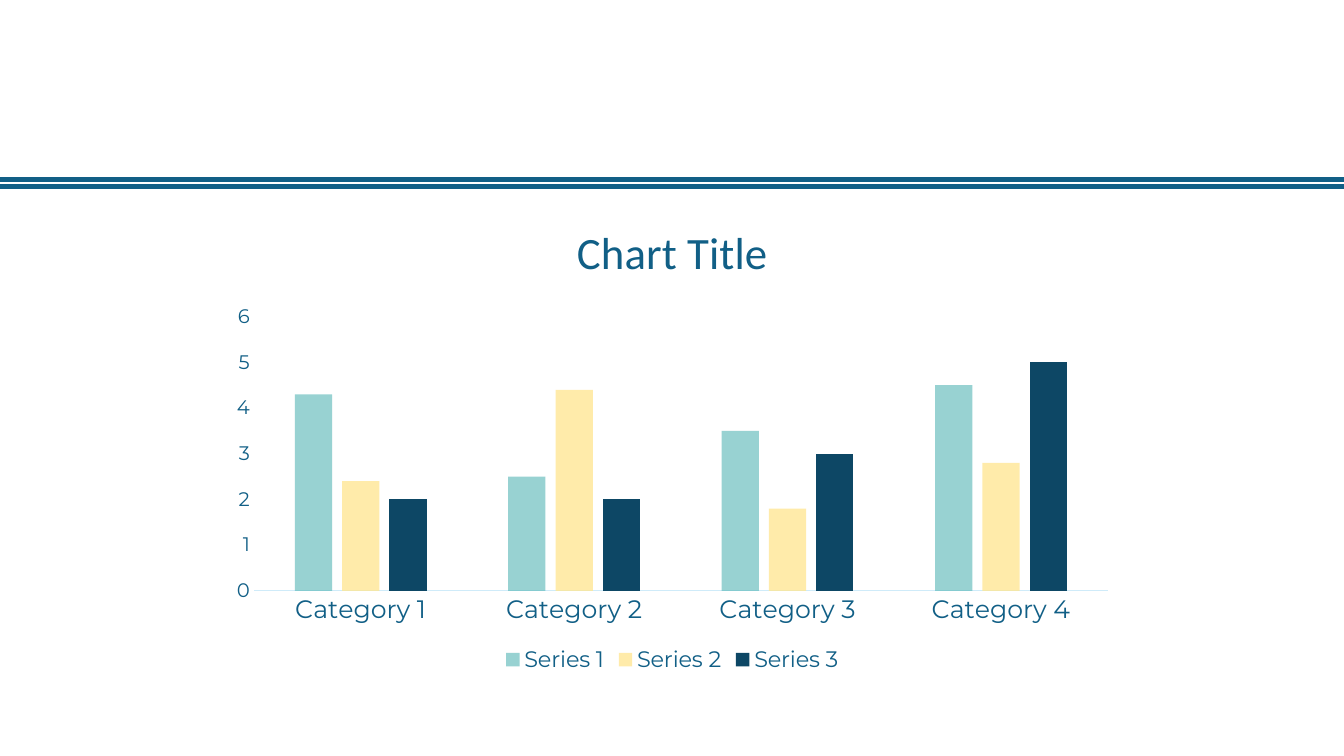
"""Build a slide with a double rule and a clustered column chart."""
from dataclasses import dataclass

from lxml import etree
from pptx import Presentation
from pptx.chart.data import CategoryChartData
from pptx.dml.color import RGBColor
from pptx.enum.chart import XL_CHART_TYPE, XL_LEGEND_POSITION, XL_TICK_MARK
from pptx.oxml.ns import qn
from pptx.util import Pt

COLUMNS = XL_CHART_TYPE.COLUMN_CLUSTERED
BOTTOM = XL_LEGEND_POSITION.BOTTOM
NO_TICK = XL_TICK_MARK.NONE

COLORS = {
    "blue": "115F86",
    "axis": "CFEBF9",
    "teal": "57B7B7",
    "yellow": "FFE690",
    "navy": "0D4765",
}
HEAD_FONT = "Calibri"
BODY_FONT = "Montserrat"
WIDTH, HEIGHT = 960, 540


@dataclass
class Series:
    name: str
    values: tuple[float, ...]
    color: str
    opacity: int = 100


CATEGORIES = [f"Category {n}" for n in range(1, 5)]
SERIES = [
    Series("Series 1", (4.3, 2.5, 3.5, 4.5), "teal", 61),
    Series("Series 2", (2.4, 4.4, 1.8, 2.8), "yellow", 76),
    Series("Series 3", (2, 2, 3, 5), "navy"),
]
RULES = [133.2, 128.2]


def rgb(name: str) -> RGBColor:
    return RGBColor.from_string(COLORS[name])


def set_font(font, size: float, name: str) -> None:
    font.size = Pt(size)
    font.name = name
    font.bold = False
    font.color.rgb = rgb("blue")


def add_rule(s, y: float) -> None:
    line = s.shapes.add_connector(1, Pt(0), Pt(y), Pt(WIDTH), Pt(y))
    line.line.color.rgb = rgb("blue")
    line.line.width = Pt(3)
    etree.SubElement(line._element.spPr, qn("a:effectLst"))


def style_series(plot_series, series: Series) -> None:
    fill = plot_series.format.fill
    fill.solid()
    fill.fore_color.rgb = rgb(series.color)
    plot_series.format.line.fill.background()
    plot_series.invert_if_negative = False
    if series.opacity < 100:
        color = plot_series._element.spPr.find(f".//{qn('a:srgbClr')}")
        alpha = etree.SubElement(color, qn("a:alpha"))
        alpha.set("val", str(series.opacity * 1000))


def style_axis(axis, size: float) -> None:
    axis.has_major_gridlines = False
    axis.major_tick_mark = axis.minor_tick_mark = NO_TICK
    set_font(axis.tick_labels.font, size, BODY_FONT)


def add_column_chart(s) -> None:
    data = CategoryChartData()
    data.categories = CATEGORIES
    for series in SERIES:
        data.add_series(series.name, series.values)
    chart = s.shapes.add_chart(
        COLUMNS, Pt(156.2), Pt(141.1), Pt(648), Pt(342.7), data
    ).chart
    set_font(chart.font, 10, HEAD_FONT)

    chart.has_title = True
    p = chart.chart_title.text_frame.paragraphs[0]
    r = p.add_run()
    r.text = "Chart Title"
    set_font(p.font, 32, HEAD_FONT)
    chart.chart_title.include_in_layout = False

    chart.has_legend = True
    chart.legend.position = BOTTOM
    chart.legend.include_in_layout = False
    set_font(chart.legend.font, 16, BODY_FONT)

    style_axis(chart.category_axis, 18)
    chart.category_axis.format.line.color.rgb = rgb("axis")
    chart.category_axis.format.line.width = Pt(0.75)
    style_axis(chart.value_axis, 14)
    chart.value_axis.format.line.fill.background()

    plot = chart.plots[0]
    plot.gap_width = 219
    plot.overlap = -27
    plot.vary_by_categories = False
    for plot_series, series in zip(plot.series, SERIES):
        style_series(plot_series, series)


def main() -> None:
    prs = Presentation()
    prs.slide_width, prs.slide_height = Pt(WIDTH), Pt(HEIGHT)
    s = prs.slides.add_slide(prs.slide_layouts[6])
    for y in RULES:
        add_rule(s, y)
    add_column_chart(s)
    prs.save("out.pptx")


if __name__ == "__main__":
    main()
